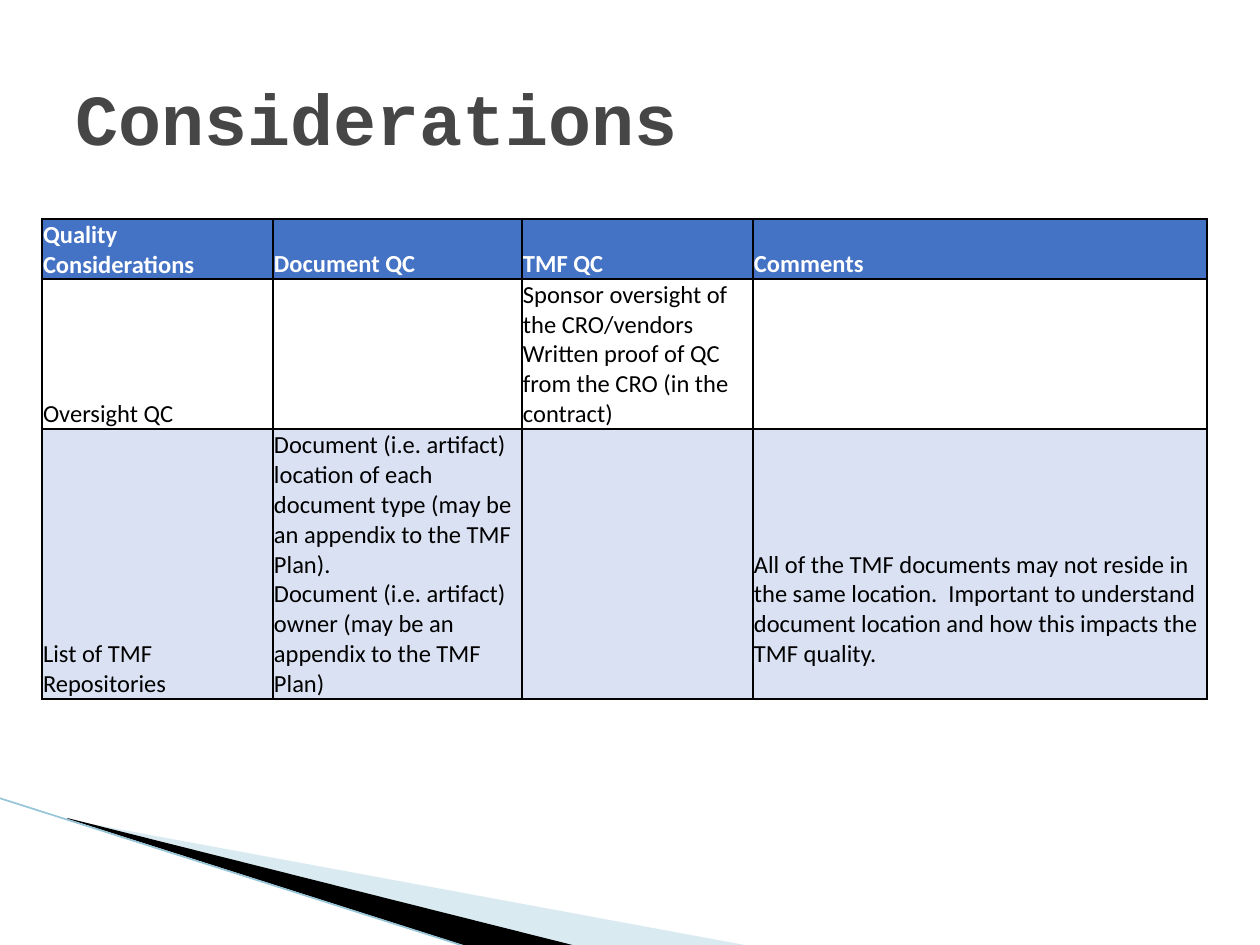
from lxml import etree
from pptx import Presentation
from pptx.dml.color import RGBColor
from pptx.enum.shapes import MSO_CONNECTOR
from pptx.enum.text import MSO_ANCHOR
from pptx.oxml.ns import qn
from pptx.util import Emu, Pt

STRAIGHT = MSO_CONNECTOR.STRAIGHT
MIDDLE, BOTTOM = MSO_ANCHOR.MIDDLE, MSO_ANCHOR.BOTTOM
THEME = {
    "title_font": "Courier New", "title_size": 41, "title": "464646",
    "table_font": "Calibri", "table_size": 14,
    "header_text": "FFFFFF", "body_text": "000000",
    "header_fill": "4472C4", "band_fill": "D9E1F2",
    "border": "000000", "border_width": 1,
    "pale_wedge": "A0CBDC", "dark_wedge": "000000",
    "edge": "97C5D8", "edge_width": 0.95,
}


def px(value):
    return Emu(round(value * 914400 / 126))


def add_span(para, text, font, size, color, bold):
    span = para.add_run()
    span.text = text
    span.font.name = font
    span.font.size = Pt(size)
    span.font.bold = bold
    span.font.color.rgb = RGBColor.from_string(color)


deck = Presentation()
deck.slide_width, deck.slide_height = px(1260), px(945)
page = deck.slides.add_slide(deck.slide_layouts[6])

wedges = [
    (THEME["pale_wedge"], 40, [(69, 820), (750, 946), (575, 946), (69, 819)]),
    (THEME["dark_wedge"], 100, [(67, 818), (576, 946), (469, 947), (68, 819)]),
]
for color, opacity, points in wedges:
    builder = page.shapes.build_freeform(*points[0], scale=px(1))
    builder.add_line_segments(points[1:], close=True)
    wedge = builder.convert_to_shape()
    wedge.shadow.inherit = False
    wedge.fill.solid()
    wedge.fill.fore_color.rgb = RGBColor.from_string(color)
    wedge.line.fill.background()
    if opacity < 100:
        tone = wedge.fill._xPr.find(".//" + qn("a:srgbClr"))
        etree.SubElement(tone, qn("a:alpha"), val=str(opacity * 1000))

edge = page.shapes.add_connector(STRAIGHT, px(-1), px(798), px(467), px(947))
edge.line.color.rgb = RGBColor.from_string(THEME["edge"])
edge.line.width = Pt(THEME["edge_width"])
etree.SubElement(edge._element.spPr, qn("a:effectLst"))

title_box = page.shapes.add_textbox(px(63), px(38), px(1134), px(158))
title_frame = title_box.text_frame
title_frame.word_wrap = True
title_frame.vertical_anchor = MIDDLE
add_span(title_frame.paragraphs[0], "Considerations", THEME["title_font"],
         THEME["title_size"], THEME["title"], True)

rows = [
    ["Quality Considerations", "Document QC", "TMF QC", "Comments"],
    ["Oversight QC", "",
     "Sponsor oversight of the CRO/vendors\n"
     "Written proof of QC from the CRO (in the contract)", ""],
    ["List of TMF Repositories",
     "Document (i.e. artifact) location of each document type "
     "(may be an appendix to the TMF Plan).\n"
     "Document (i.e. artifact) owner (may be an appendix to the TMF Plan)", "",
     "All of the TMF documents may not reside in the same location.  "
     "Important to understand document location and how this impacts the TMF quality."],
]
column_widths = [231, 249, 231, 454]
row_heights = [60, 150, 270]
row_fills = [THEME["header_fill"], None, THEME["band_fill"]]
raised_cell = (2, 3)

table = page.shapes.add_table(
    len(rows), len(column_widths), px(42), px(219),
    px(sum(column_widths)), px(sum(row_heights))).table
table.first_row = False
table.horz_banding = False
for column, width in zip(table.columns, column_widths):
    column.width = px(width)
for row, height in zip(table.rows, row_heights):
    row.height = px(height)

for row_index, texts in enumerate(rows):
    is_header = row_index == 0
    text_color = THEME["header_text"] if is_header else THEME["body_text"]
    for column_index, text in enumerate(texts):
        cell = table.cell(row_index, column_index)
        cell.vertical_anchor = BOTTOM
        cell.margin_left = cell.margin_right = cell.margin_top = px(1)
        cell.margin_bottom = px(30 if (row_index, column_index) == raised_cell else 0)
        for side in ("a:lnL", "a:lnR", "a:lnT", "a:lnB"):
            border = etree.SubElement(cell._tc.get_or_add_tcPr(), qn(side),
                                      w=str(Pt(THEME["border_width"])))
            paint = etree.SubElement(border, qn("a:solidFill"))
            etree.SubElement(paint, qn("a:srgbClr"), val=THEME["border"])
        if row_fills[row_index]:
            cell.fill.solid()
            cell.fill.fore_color.rgb = RGBColor.from_string(row_fills[row_index])
        else:
            cell.fill.background()
        para = cell.text_frame.paragraphs[0]
        if not text:
            para.font.size = Pt(THEME["table_size"])
            continue
        for line_index, line in enumerate(text.split("\n")):
            if line_index:
                para.add_line_break()
            add_span(para, line, THEME["table_font"], THEME["table_size"],
                     text_color, is_header)

deck.save("out.pptx")
